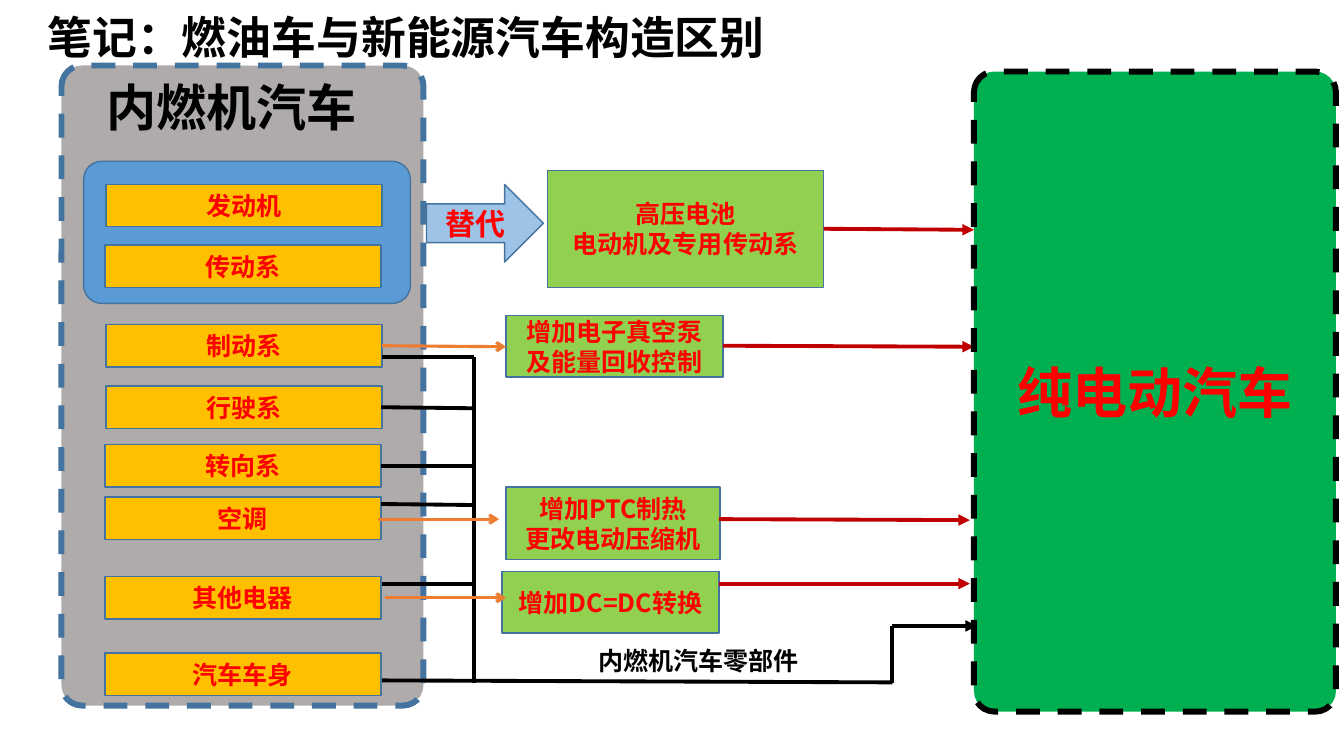
"""Build a slide comparing the structure of combustion and electric cars."""
from lxml import etree
from pptx import Presentation
from pptx.dml.color import RGBColor
from pptx.enum.dml import MSO_LINE_DASH_STYLE as Dash
from pptx.enum.shapes import MSO_CONNECTOR as Connector, MSO_SHAPE as Shape
from pptx.enum.text import MSO_ANCHOR as Anchor, MSO_AUTO_SIZE as AutoSize, PP_ALIGN as Align
from pptx.oxml.ns import qn
from pptx.util import Pt

PX = 9144
FONT = "Noto Sans CJK SC"
COLORS = {
    "black": "000000", "red": "FF0000", "grey": "AFABAB", "blue": "5B9BD5",
    "pale blue": "9DC3E6", "edge": "43739E", "amber": "FFC000",
    "light green": "92D050", "green": "00B050", "crimson": "C00000", "orange": "ED7D31",
}
BODY_SIZE = 17.9

TITLE = ("笔记：燃油车与新能源汽车构造区别", (37, 5, 738, 64), 32)
FUEL_CAR = ("内燃机汽车", (96, 71, 311, 70), 35.8)
FUEL_PANEL = (61, 65, 359, 635)
POWERTRAIN = (83, 160, 324, 141)
ELECTRIC_CAR = ("纯电动汽车", (966, 71, 359, 635), 39.3)
REPLACEMENT = ("替代", (423, 183, 116, 77), 21.4)
PARTS_LABEL = ("内燃机汽车零部件", (556, 634, 274, 42))

SYSTEM_SIZE = (274, 42)
SYSTEMS = [
    ("发动机", 105, 183), ("传动系", 104, 243), ("制动系", 105, 322), ("行驶系", 105, 383),
    ("转向系", 104, 441), ("空调", 104, 493), ("其他电器", 104, 572), ("汽车车身", 104, 648),
]
CHANGES = [
    ("高压电池\n电动机及专用传动系", (543, 169, 274, 116)),
    ("增加电子真空泵\n及能量回收控制", (502, 313, 215, 61)),
    ("增加PTC制热\n更改电动压缩机", (502, 483, 212, 72)),
    ("增加DC=DC转换", (498, 567, 215, 61)),
]
CHANGE_ARROWS = [(379, 343, 502, 344), (375, 515, 495, 515), (382, 593, 502, 593)]
RESULT_ARROWS = [
    (817, 227, 966, 228), (717, 343, 966, 344), (713, 515, 962, 516), (713, 579, 962, 579),
]
KEPT_PARTS = [
    (379, 354, 470, 354), (378, 404, 468, 405), (378, 462, 468, 462), (378, 500, 468, 501),
    (379, 579, 470, 579), (379, 675, 885, 677), (470, 354, 470, 678), (885, 621, 885, 678),
]
KEPT_ARROW = (885, 621, 969, 621)

deck = Presentation()
deck.slide_width, deck.slide_height = 1333 * PX, 750 * PX
slide = deck.slides.add_slide(deck.slide_layouts[5])


def color(name):
    return RGBColor.from_string(COLORS[name])


def emu(lengths):
    return [length * PX for length in lengths]


def write(shape, text, size, ink, align=Align.CENTER, anchor=Anchor.MIDDLE, inset=0, wrap=True):
    frame = shape.text_frame
    frame.text = text
    frame.auto_size = AutoSize.NONE
    frame.word_wrap = wrap
    frame.vertical_anchor = anchor
    frame.margin_left = frame.margin_right = inset * PX
    frame.margin_top = frame.margin_bottom = inset * PX // 2
    for paragraph in frame.paragraphs:
        paragraph.alignment = align
        font = paragraph.font
        font.size, font.bold, font.name = Pt(size), True, FONT
        font.color.rgb = color(ink)
        defaults = paragraph._p.pPr.find(qn("a:defRPr"))
        etree.SubElement(defaults, qn("a:ea"), typeface=FONT)


def add_box(box, fill, text="", size=BODY_SIZE, kind=Shape.RECTANGLE,
            edge="edge", width=1, corner=None, dashed=False):
    shape = slide.shapes.add_shape(kind, *emu(box))
    shape.shadow.inherit = False
    shape.fill.solid()
    shape.fill.fore_color.rgb = color(fill)
    shape.line.color.rgb = color(edge)
    shape.line.width = Pt(width)
    if dashed:
        shape.line.dash_style = Dash.DASH
    if corner:
        shape.adjustments[0] = corner
    if text:
        write(shape, text, size, "red")


def add_panel(box, fill, edge, text="", size=BODY_SIZE):
    add_box(box, fill, text, size, Shape.ROUNDED_RECTANGLE, edge, 4.25, 0.057, True)


def add_line(ends, ink, width=2.75, head=None):
    connector = slide.shapes.add_connector(Connector.STRAIGHT, *emu(ends))
    connector.line.color.rgb = color(ink)
    connector.line.width = Pt(width)
    if head:
        etree.SubElement(connector.line._get_or_add_ln(), qn("a:tailEnd"), type=head)
    etree.SubElement(connector._element.spPr, qn("a:effectLst"))


def add_label(text, box, size=BODY_SIZE, **layout):
    write(slide.shapes.add_textbox(*emu(box)), text, size, "black", **layout)


heading, heading_box, heading_size = TITLE
title = slide.shapes.title
title.left, title.top, title.width, title.height = emu(heading_box)
write(title, heading, heading_size, "black", Align.LEFT, Anchor.TOP, 10, False)

add_panel(FUEL_PANEL, "grey", "edge")
add_box(POWERTRAIN, "blue", kind=Shape.ROUNDED_RECTANGLE, corner=0.127)
for system, left, top in SYSTEMS:
    add_box((left, top, *SYSTEM_SIZE), "amber", system)
for change, box in CHANGES:
    add_box(box, "light green", change)
replacement, arrow_box, arrow_size = REPLACEMENT
add_box(arrow_box, "pale blue", replacement, arrow_size, Shape.RIGHT_ARROW)

for ends in KEPT_PARTS:
    add_line(ends, "black")
add_line(KEPT_ARROW, "black", head="triangle")
for ends in CHANGE_ARROWS:
    add_line(ends, "orange", 2.25, "arrow")
for ends in RESULT_ARROWS:
    add_line(ends, "crimson", head="triangle")

add_label(*PARTS_LABEL)
electric_car, electric_box, electric_size = ELECTRIC_CAR
add_panel(electric_box, "green", "black", electric_car, electric_size)
add_label(*FUEL_CAR, align=Align.LEFT, anchor=Anchor.TOP, inset=10)

deck.save("out.pptx")
